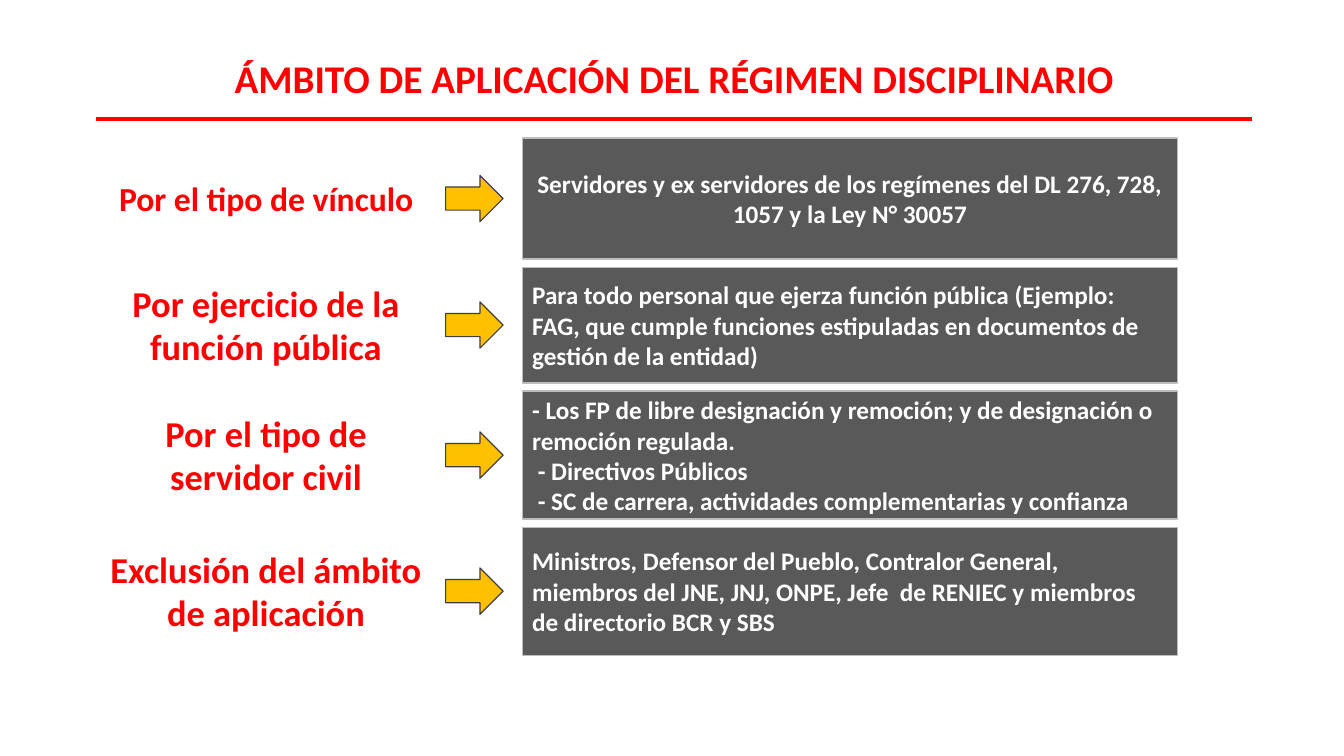
from lxml import etree
from pptx import Presentation
from pptx.dml.color import RGBColor
from pptx.enum.shapes import MSO_CONNECTOR, MSO_SHAPE
from pptx.enum.text import MSO_ANCHOR, MSO_AUTO_SIZE, PP_ALIGN
from pptx.oxml.ns import qn
from pptx.util import Inches, Pt

RECTANGLE = MSO_SHAPE.RECTANGLE
RIGHT_ARROW = MSO_SHAPE.RIGHT_ARROW
STRAIGHT = MSO_CONNECTOR.STRAIGHT
MIDDLE = MSO_ANCHOR.MIDDLE
GROW = MSO_AUTO_SIZE.SHAPE_TO_FIT_TEXT
LEFT, CENTER = PP_ALIGN.LEFT, PP_ALIGN.CENTER

FONT = "Calibri"
COLORS = {
    "red": "FF0000",
    "panel": "595959",
    "panel_line": "BDBDBD",
    "arrow": "FFC000",
    "arrow_line": "3F3F3F",
    "white": "FFFFFF",
}

SLIDE_SIZE = (13.33, 7.5)
MARGIN = 0.95
CONTENT_WIDTH = 11.47
TITLE_TOP, TITLE_HEIGHT, RULE_TOP = 0.49, 0.57, 1.18
LABEL_WIDTH = 3.38
ARROW_LEFT, ARROW_WIDTH, ARROW_HEIGHT = 4.42, 0.57, 0.46
PANEL_LEFT, PANEL_WIDTH = 5.18, 6.5
FIRST_ROW_TOP, ROW_GAP = 1.37, 0.08

TITLE = "ÁMBITO DE APLICACIÓN DEL RÉGIMEN DISCIPLINARIO"
ROWS = [
    {
        "height": 1.2, "label": "Por el tipo de vínculo",
        "label_height": 0.5, "label_size": 24, "alignment": CENTER,
        "text": "Servidores y ex servidores de los regímenes del DL 276, 728, "
                "1057 y la Ley N° 30057",
    },
    {
        "height": 1.15, "label": "Por ejercicio de la función pública",
        "label_height": 0.98, "label_size": 26, "alignment": LEFT,
        "text": "Para todo personal que ejerza función pública (Ejemplo: FAG, "
                "que cumple funciones estipuladas en documentos de gestión de "
                "la entidad)",
    },
    {
        "height": 1.27, "label": "Por el tipo de servidor civil",
        "label_height": 0.98, "label_size": 26, "alignment": LEFT,
        "text": "- Los FP de libre designación y remoción; y de designación o "
                "remoción regulada.\n"
                " - Directivos Públicos\n"
                " - SC de carrera, actividades complementarias y confianza",
    },
    {
        "height": 1.27, "label": "Exclusión del ámbito de aplicación",
        "label_height": 0.98, "label_size": 26, "alignment": LEFT,
        "text": "Ministros, Defensor del Pueblo, Contralor General, miembros "
                "del JNE, JNJ, ONPE, Jefe  de RENIEC y miembros de directorio "
                "BCR y SBS",
    },
]


def color(name):
    """Return the palette colour with this name."""
    return RGBColor.from_string(COLORS[name])


def write_text(text_frame, text, size, color_name, alignment):
    """Fill a text frame with bold text in one style."""
    text_frame.word_wrap = True
    text_frame.text = text
    for paragraph in text_frame.paragraphs:
        paragraph.alignment = alignment
        for run in paragraph.runs:
            run.font.name = FONT
            run.font.size = Pt(size)
            run.font.bold = True
            run.font.color.rgb = color(color_name)


def add_heading(slide, left, top, width, height, text, size):
    """Add a centred red text box."""
    box = slide.shapes.add_textbox(*map(Inches, (left, top, width, height)))
    write_text(box.text_frame, text, size, "red", CENTER)
    box.text_frame.auto_size = GROW


def add_block(slide, kind, left, top, width, height, fill, line):
    """Add a filled, thinly outlined shape and return it."""
    shape = slide.shapes.add_shape(kind, *map(Inches, (left, top, width, height)))
    shape.shadow.inherit = False
    shape.fill.solid()
    shape.fill.fore_color.rgb = color(fill)
    shape.line.color.rgb = color(line)
    shape.line.width = Pt(0.85)
    return shape


def add_rule(slide):
    """Add the red line under the title."""
    rule = slide.shapes.add_connector(
        STRAIGHT, Inches(MARGIN), Inches(RULE_TOP),
        Inches(MARGIN + CONTENT_WIDTH), Inches(RULE_TOP))
    rule.line.color.rgb = color("red")
    rule.line.width = Pt(2.25)
    etree.SubElement(rule._element.spPr, qn("a:effectLst"))


def add_row(slide, row, top):
    """Add a label, an arrow and a panel centred on one line."""
    middle = top + row["height"] / 2
    add_heading(slide, MARGIN, middle - row["label_height"] / 2, LABEL_WIDTH,
                row["label_height"], row["label"], row["label_size"])
    add_block(slide, RIGHT_ARROW, ARROW_LEFT, middle - ARROW_HEIGHT / 2,
              ARROW_WIDTH, ARROW_HEIGHT, "arrow", "arrow_line")
    panel = add_block(slide, RECTANGLE, PANEL_LEFT, top, PANEL_WIDTH,
                      row["height"], "panel", "panel_line")
    panel.text_frame.vertical_anchor = MIDDLE
    write_text(panel.text_frame, row["text"], 18, "white", row["alignment"])


def main():
    """Build and save the slide."""
    presentation = Presentation()
    presentation.slide_width, presentation.slide_height = map(Inches, SLIDE_SIZE)
    slide = presentation.slides.add_slide(presentation.slide_layouts[6])
    add_rule(slide)
    add_heading(slide, MARGIN, TITLE_TOP, CONTENT_WIDTH, TITLE_HEIGHT, TITLE, 28)
    top = FIRST_ROW_TOP
    for row in ROWS:
        add_row(slide, row, top)
        top += row["height"] + ROW_GAP
    presentation.save("out.pptx")


if __name__ == "__main__":
    main()
